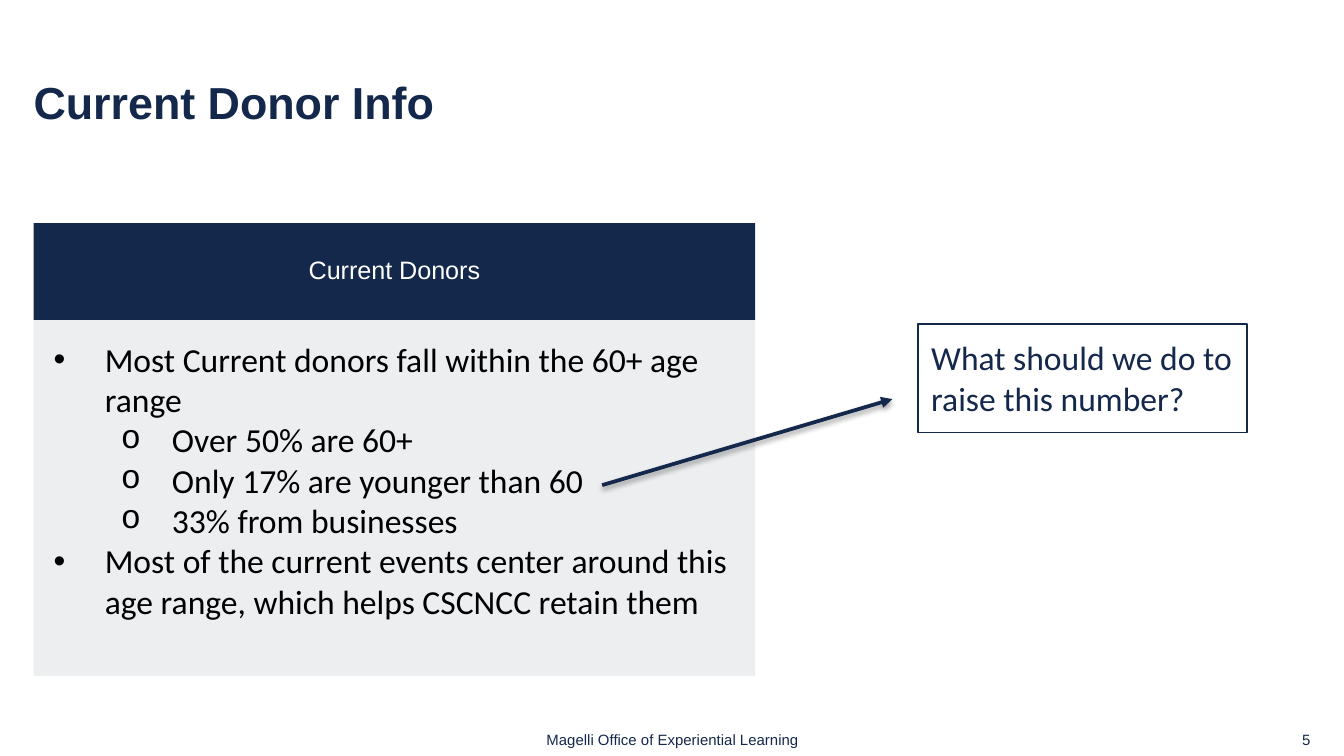
from lxml import etree
from pptx import Presentation
from pptx.dml.color import RGBColor
from pptx.enum.shapes import MSO_CONNECTOR, MSO_SHAPE
from pptx.enum.text import MSO_ANCHOR, PP_ALIGN
from pptx.oxml import parse_xml
from pptx.oxml.ns import nsdecls, qn
from pptx.util import Inches, Pt

# Content
TITLE = "Current Donor Info"
CARD_HEADING = "Current Donors"
DONOR_FACTS = [  # (level, text)
    (0, "Most Current donors fall within the 60+ age range"),
    (1, "Over 50% are 60+"),
    (1, "Only 17% are younger than 60"),
    (1, "33% from businesses"),
    (0, "Most of the current events center around this age range, "
        "which helps CSCNCC retain them"),
]
QUESTION = "What should we do to raise this number?"
FOOTER = "Magelli Office of Experiential Learning"
PAGE_NUMBER = "5"


class Theme:
    navy = RGBColor.from_string("13284B")
    white = RGBColor.from_string("FFFFFF")
    black = RGBColor.from_string("000000")
    heading_font, body_font = "Arial", "Calibri"
    title, heading, body, small = 24, 13.5, 18, 8
    tint_percent = 8


SLIDE_WIDTH = 10
SLIDE_HEIGHT = SLIDE_WIDTH * 9 / 16
BULLETS = [("•", "Arial"), ("o", "Courier New")]  # one per level
HANGING, LEVEL_STEP = 0.38, 0.5
MARGIN, CARD_WIDTH = 0.25, 5.37
FOOTER_TOP, FOOTER_HEIGHT = 5.4, 0.2


def add_bullet(paragraph, level):
    paragraph.level = level
    symbol, font = BULLETS[level]
    properties = paragraph._p.get_or_add_pPr()
    properties.set("marL", str(Inches(HANGING + level * LEVEL_STEP)))
    properties.set("indent", str(-Inches(HANGING)))
    etree.SubElement(properties, qn("a:buFont")).set("typeface", font)
    etree.SubElement(properties, qn("a:buChar")).set("char", symbol)


def write(shape, paragraphs, *, size, color=Theme.navy, font=Theme.heading_font,
          bold=False, align=PP_ALIGN.LEFT, anchor=MSO_ANCHOR.MIDDLE,
          inset=0, right_inset=None, spacing=None):
    """Fill a shape with (level, text) pairs; level None means no bullet."""
    frame = shape.text_frame
    frame.word_wrap = True
    frame.vertical_anchor = anchor
    frame.margin_left = frame.margin_top = frame.margin_bottom = Inches(inset)
    frame.margin_right = Inches(inset if right_inset is None else right_inset)
    for index, (level, text) in enumerate(paragraphs):
        paragraph = frame.paragraphs[0] if index == 0 else frame.add_paragraph()
        paragraph.alignment = align
        if spacing:
            paragraph.line_spacing = spacing
        if level is not None:
            add_bullet(paragraph, level)
        run = paragraph.add_run()
        run.text = text
        run.font.size = Pt(size)
        run.font.name = font
        run.font.bold = bold
        run.font.color.rgb = color


def add_text(slide, box, text, **style):
    write(slide.shapes.add_textbox(*map(Inches, box)), [(None, text)], **style)


def add_box(slide, box, fill=None, line=None):
    shape = slide.shapes.add_shape(MSO_SHAPE.RECTANGLE, *map(Inches, box))
    shape.shadow.inherit = False
    if fill is None:
        shape.fill.background()
    else:
        shape.fill.solid()
        shape.fill.fore_color.rgb = fill
    if line is None:
        shape.line.fill.background()
    else:
        shape.line.color.rgb = line
        shape.line.width = Pt(0.75)
    return shape


def add_arrow(slide, start, end):
    arrow = slide.shapes.add_connector(
        MSO_CONNECTOR.STRAIGHT, *map(Inches, start + end))
    arrow.line.color.rgb = Theme.navy
    arrow.line.width = Pt(2)
    outline = arrow._element.spPr.find(qn("a:ln"))
    etree.SubElement(outline, qn("a:tailEnd")).set("type", "triangle")
    arrow._element.spPr.append(parse_xml(
        f'<a:effectLst {nsdecls("a")}>'
        f'<a:outerShdw blurRad="{Pt(3.1)}" dist="{Pt(1.6)}" dir="5400000" rotWithShape="0">'
        '<a:srgbClr val="000000"><a:alpha val="38000"/></a:srgbClr>'
        '</a:outerShdw></a:effectLst>'))


def main():
    deck = Presentation()
    deck.slide_width, deck.slide_height = Inches(SLIDE_WIDTH), Inches(SLIDE_HEIGHT)
    slide = deck.slides.add_slide(deck.slide_layouts[6])

    # Footer and title
    add_text(slide, (4.03, FOOTER_TOP, 1.95, FOOTER_HEIGHT), FOOTER,
             size=Theme.small, align=PP_ALIGN.CENTER)
    add_text(slide, (MARGIN, 0.48, SLIDE_WIDTH - 2 * MARGIN, 0.6), TITLE,
             size=Theme.title, bold=True, right_inset=1.2, spacing=0.9)

    # Donor card: heading band above a tinted body
    heading = add_box(slide, (MARGIN, 1.66, CARD_WIDTH, 0.72), fill=Theme.navy)
    write(heading, [(None, CARD_HEADING)], size=Theme.heading, color=Theme.white,
          align=PP_ALIGN.CENTER, inset=0.04, spacing=0.9)
    facts = add_box(slide, (MARGIN, 2.37, CARD_WIDTH, 2.66), fill=Theme.navy)
    tint = facts._element.spPr.find(qn("a:solidFill"))[0]
    etree.SubElement(tint, qn("a:alpha")).set("val", str(Theme.tint_percent * 1000))
    write(facts, DONOR_FACTS, size=Theme.body, color=Theme.black,
          font=Theme.body_font, anchor=MSO_ANCHOR.TOP, inset=0.15)

    # Arrow to the question
    add_arrow(slide, (4.48, 3.61), (6.64, 2.97))
    question = add_box(slide, (6.83, 2.41, 2.45, 0.81), line=Theme.navy)
    write(question, [(None, QUESTION)], size=Theme.body, font=Theme.body_font,
          anchor=MSO_ANCHOR.TOP, inset=0.1)

    # Page number
    add_text(slide, (7.5, FOOTER_TOP, 2.25, FOOTER_HEIGHT), PAGE_NUMBER,
             size=Theme.small, align=PP_ALIGN.RIGHT)

    deck.save("out.pptx")


if __name__ == "__main__":
    main()
